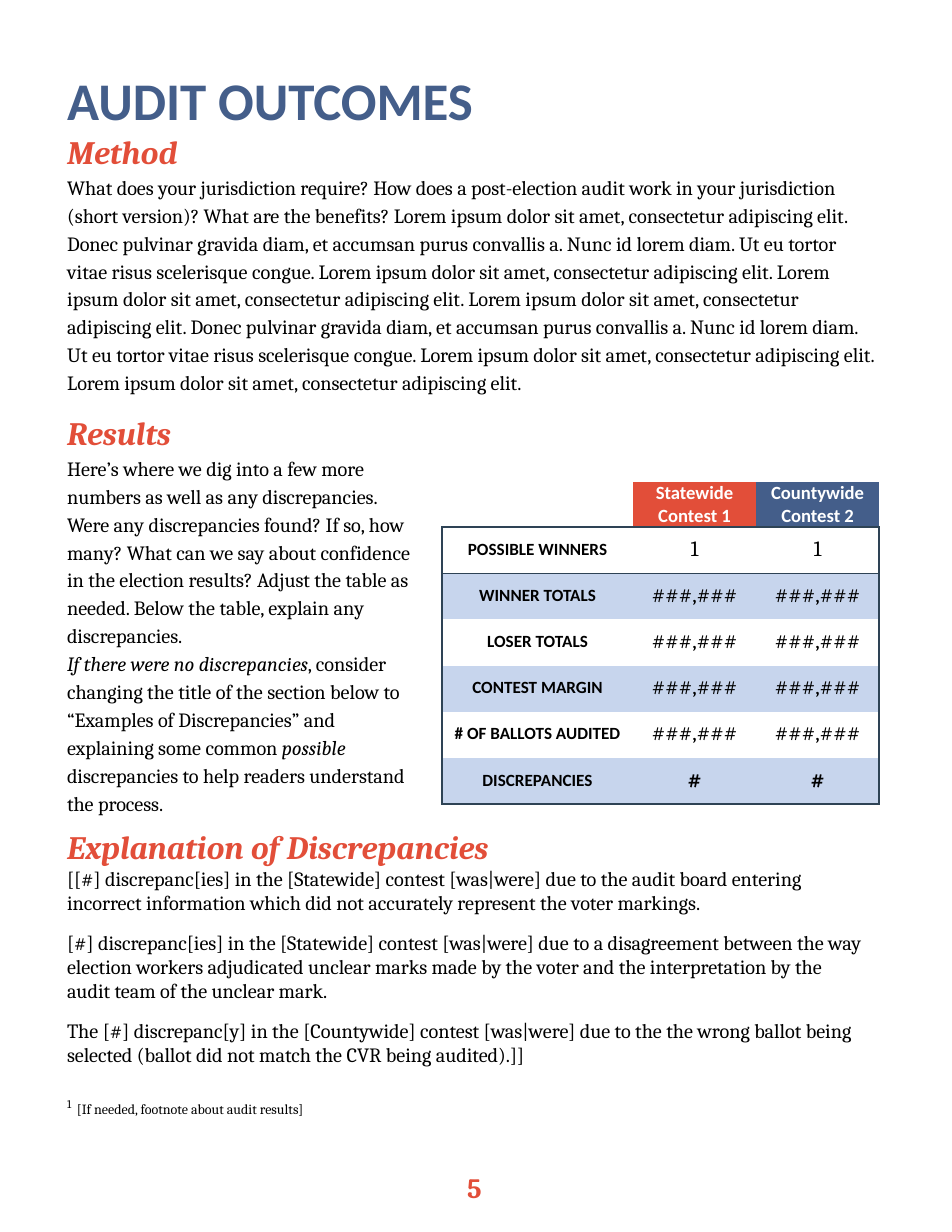
from lxml.etree import SubElement
from pptx import Presentation
from pptx.dml.color import RGBColor
from pptx.enum.text import MSO_ANCHOR, MSO_AUTO_SIZE, PP_ALIGN
from pptx.oxml.ns import qn
from pptx.util import Pt

RED, BLUE, PALE, NAVY = "E24E39", "445E8A", "C7D5ED", "2E4355"
BLACK, WHITE = "000000", "FFFFFF"
LEFT = 36
PLAIN_TABLE = "{2D5ABB26-0587-4C30-8999-92F81FD0307C}"

TITLE = dict(name="Calibri", size=34, color=BLUE, bold=True, italic=False)
HEADING = dict(name="Cambria", size=21, color=RED, bold=True, italic=True)
BODY = dict(name="Cambria", size=13, color=BLACK, bold=False, italic=False)
EMPHASIS = BODY | dict(italic=True)
FOOTNOTE = BODY | dict(size=9)
PAGE_NUMBER = TITLE | dict(name="Cambria", size=18, color=RED)
COLUMN_HEAD = TITLE | dict(size=12, color=WHITE)
ROW_HEAD = TITLE | dict(size=11, color=BLACK)
VALUE = BODY | dict(size=14)

METHOD = (
    "What does your jurisdiction require? How does a post-election audit work in your "
    "jurisdiction (short version)? What are the benefits? Lorem ipsum dolor sit amet, "
    "consectetur adipiscing elit. Donec pulvinar gravida diam, et accumsan purus convallis a. "
    "Nunc id lorem diam. Ut eu tortor vitae risus scelerisque congue. Lorem ipsum dolor sit "
    "amet, consectetur adipiscing elit. Lorem ipsum dolor sit amet, consectetur adipiscing "
    "elit. Lorem ipsum dolor sit amet, consectetur adipiscing elit. Donec pulvinar gravida "
    "diam, et accumsan purus convallis a. Nunc id lorem diam. Ut eu tortor vitae risus "
    "scelerisque congue. Lorem ipsum dolor sit amet, consectetur adipiscing elit. Lorem ipsum "
    "dolor sit amet, consectetur adipiscing elit."
)
RESULTS = (
    "Here’s where we dig into a few more numbers as well as any discrepancies. Were any "
    "discrepancies found? If so, how many? What can we say about confidence in the election "
    "results? Adjust the table as needed. Below the table, explain any discrepancies. "
)
RESULTS_ADVICE = [
    ("If there were no discrepancies", EMPHASIS),
    (", consider changing the title of the section below to “Examples of Discrepancies” "
     "and explaining some common ", BODY),
    ("possible", EMPHASIS),
    (" discrepancies to help readers understand the process.", BODY),
]
EXPLANATIONS = [
    "[[#] discrepanc[ies] in the [Statewide] contest [was|were] due to the audit board "
    "entering incorrect information which did not accurately represent the voter markings.",
    "[#] discrepanc[ies] in the [Statewide] contest [was|were] due to a disagreement between "
    "the way election workers adjudicated unclear marks made by the voter and the "
    "interpretation by the audit team of the unclear mark.",
    "The [#] discrepanc[y] in the [Countywide] contest [was|were] due to the the wrong ballot "
    "being selected (ballot did not match the CVR being audited).]]",
]
COLUMN_FILLS = [None, RED, BLUE]
TABLE_ROWS = [
    ["", "Statewide Contest 1", "Countywide Contest 2"],
    ["POSSIBLE WINNERS", "1", "1"],
    ["WINNER TOTALS", "###,###", "###,###"],
    ["LOSER TOTALS", "###,###", "###,###"],
    ["CONTEST MARGIN", "###,###", "###,###"],
    ["# OF BALLOTS AUDITED", "###,###", "###,###"],
    ["DISCREPANCIES", "#", "#"],
]


def rgb(value):
    return RGBColor.from_string(value)


def add_run(paragraph, text, style):
    run = paragraph.add_run()
    run.text = text
    for key, value in style.items():
        if key == "color":
            run.font.color.rgb = rgb(value)
        else:
            setattr(run.font, key, Pt(value) if key == "size" else value)
    return run


def format_paragraph(paragraph, alignment=PP_ALIGN.LEFT, line_spacing=1.0, space_before=0):
    values = dict(alignment=alignment, line_spacing=line_spacing,
                  space_before=Pt(space_before), space_after=Pt(0))
    for key, value in values.items():
        setattr(paragraph, key, value)
    return paragraph


def add_paragraph(frame, runs, **layout):
    first = frame.paragraphs[0]
    paragraph = first if not first.runs else frame.add_paragraph()
    format_paragraph(paragraph, **layout)
    for text, style in runs:
        add_run(paragraph, text, style)
    return paragraph


def remove_bullet(paragraph):
    properties = paragraph._p.get_or_add_pPr()
    properties.set("marL", "0")
    properties.set("indent", "0")
    SubElement(properties, qn("a:buNone"))


def place_text(shape, left, top, width, height):
    for key, value in dict(left=left, top=top, width=width, height=height).items():
        setattr(shape, key, Pt(value))
    frame = shape.text_frame
    settings = dict(word_wrap=True, auto_size=MSO_AUTO_SIZE.NONE, vertical_anchor=MSO_ANCHOR.TOP)
    settings |= {f"margin_{side}": Pt(7.2) for side in ("left", "top", "right", "bottom")}
    for key, value in settings.items():
        setattr(frame, key, value)
    return frame


def add_text_box(slide, left, top, width, height):
    return place_text(slide.shapes.add_textbox(0, 0, 0, 0), left, top, width, height)


def add_border(cell, side):
    line = SubElement(cell._tc.get_or_add_tcPr(), qn(f"a:ln{side}"), w=str(Pt(1)))
    SubElement(SubElement(line, qn("a:solidFill")), qn("a:srgbClr"), val=NAVY)


def fill_cell(cell, text, style, fill, borders, line_spacing):
    for side in ("left", "top", "right", "bottom"):
        setattr(cell, f"margin_{side}", 0)
    cell.vertical_anchor = MSO_ANCHOR.MIDDLE
    for side in borders:
        add_border(cell, side)
    if fill:
        cell.fill.solid()
        cell.fill.fore_color.rgb = rgb(fill)
    else:
        cell.fill.background()
    if text:
        add_paragraph(cell.text_frame, [(text, style)],
                      alignment=PP_ALIGN.CENTER, line_spacing=line_spacing)


def add_results_table(slide):
    widths = [122.8, 79.1, 79.1]
    heights = [29] + [29.7] * 6
    frame = slide.shapes.add_table(len(heights), len(widths), Pt(284.2), Pt(309.6),
                                   Pt(sum(widths)), Pt(sum(heights)))
    table = frame.table
    table.first_row = table.horz_banding = False
    table._tbl.tblPr.find(qn("a:tableStyleId")).text = PLAIN_TABLE
    for column, width in zip(table.columns, widths):
        column.width = Pt(width)
    last_row, last_column = len(heights) - 1, len(widths) - 1
    for i, texts in enumerate(TABLE_ROWS):
        table.rows[i].height = Pt(heights[i])
        for j, text in enumerate(texts):
            if i == 0:
                fill_cell(table.cell(i, j), text, COLUMN_HEAD, COLUMN_FILLS[j], "", 1.0)
                continue
            # Outline around the body rows
            edges = dict(L=j == 0, R=j == last_column, T=i == 1, B=i == last_row)
            borders = [side for side, shown in edges.items() if shown]
            style = ROW_HEAD if j == 0 else VALUE | dict(bold=i == last_row)
            fill = PALE if i % 2 == 0 else None
            fill_cell(table.cell(i, j), text, style, fill, borders, 0.8)


def main():
    presentation = Presentation()
    presentation.slide_width, presentation.slide_height = Pt(612), Pt(792)
    slide = presentation.slides.add_slide(presentation.slide_layouts[1])

    # Title
    title = place_text(slide.shapes.title, LEFT, 36, 536, 55.5)
    add_paragraph(title, [("AUDIT OUTCOMES", TITLE)])

    # Method
    method = place_text(slide.placeholders[1], LEFT, 77.8, 533.5, 190)
    add_paragraph(method, [("Method", HEADING)])
    add_paragraph(method, [(METHOD, BODY)], line_spacing=1.15)
    for paragraph in method.paragraphs:
        remove_bullet(paragraph)

    # Results and table
    results = add_text_box(slide, LEFT, 258.5, 239, 275.8)
    add_paragraph(results, [("Results", HEADING)])
    paragraph = add_paragraph(results, [(RESULTS, BODY)], line_spacing=1.15)
    paragraph.add_line_break()
    for text, style in RESULTS_ADVICE:
        add_run(paragraph, text, style)
    add_results_table(slide)

    # Explanation and footnote
    explanation = add_text_box(slide, LEFT, 524.2, 526.3, 195.8)
    add_paragraph(explanation, [("Explanation of Discrepancies", HEADING)])
    for i, text in enumerate(EXPLANATIONS):
        add_paragraph(explanation, [(text, BODY)], space_before=10 if i else 0)
    note = add_paragraph(explanation, [("1 ", BODY), (" [If needed, footnote about audit results]", FOOTNOTE)],
                         line_spacing=1.15, space_before=15)
    note.runs[0].font._element.set("baseline", "30000")

    # Page number
    number = add_text_box(slide, -2, 745.2, 614, 25.2)
    add_paragraph(number, [("5", PAGE_NUMBER)], alignment=PP_ALIGN.CENTER)

    presentation.save("out.pptx")


if __name__ == "__main__":
    main()
